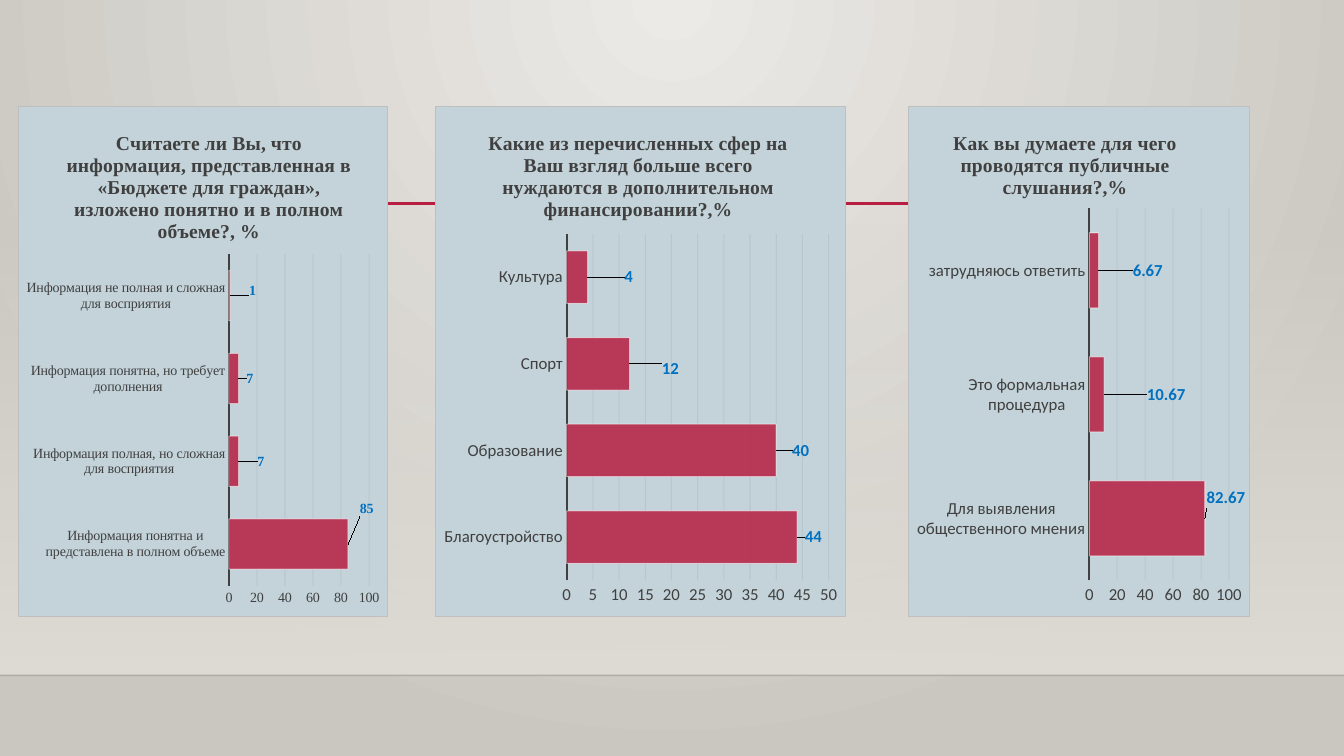
from pptx import Presentation
from pptx.chart.data import CategoryChartData
from pptx.dml.color import RGBColor
from pptx.enum.chart import XL_CHART_TYPE, XL_LABEL_POSITION, XL_TICK_MARK
from pptx.enum.shapes import MSO_CONNECTOR, MSO_SHAPE
from pptx.oxml import parse_xml
from pptx.oxml.ns import nsdecls, qn
from pptx.util import Cm, Pt
from lxml import etree

BARS = XL_CHART_TYPE.BAR_CLUSTERED
INSIDE = XL_LABEL_POSITION.INSIDE_END
NO_TICK = XL_TICK_MARK.NONE
LINE = MSO_CONNECTOR.STRAIGHT
RECT = MSO_SHAPE.RECTANGLE
SERIF = "Times New Roman"
SANS = "Calibri"
WIDE, HIGH = 33.87, 19.05
FLOOR = 17.02
COLORS = {
    "glow": "ECEAE7", "edge": "CAC7C1", "wall": "DFDBD5", "floor": "000001",
    "red": "B71E42", "panel": "C3D3D9", "border": "BFBFBF", "text": "404040",
    "grid": "0D0D0D", "white": "FFFFFF", "blue": "0070C0",
}

CHARTS = [
    dict(
        box=(10.97, 10.34), face=SANS, size=12, top=50, step=5,
        title="Какие из перечисленных сфер на Ваш взгляд больше всего "
              "нуждаются в дополнительном финансировании?,%",
        area=(0.32, 0.25, 0.64, 0.68),
        rows=[("Благоустройство", 44, 0.07, 0), ("Образование", 40, 0.09, 0),
              ("Спорт", 12, 0.13, 0.01), ("Культура", 4, 0.12, 0)],
    ),
    dict(
        box=(22.89, 8.61), face=SANS, size=12, top=100, step=20,
        title="Как вы думаете для чего проводятся публичные слушания?,%",
        area=(0.53, 0.2, 0.41, 0.73),
        rows=[("Для выявления общественного мнения", 82.67, 0.13, -0.04),
              ("Это формальная процедура", 10.67, 0.25, 0),
              ("затрудняюсь ответить", 6.67, 0.2, 0)],
    ),
    dict(
        box=(0.46, 9.32), face=SERIF, size=10, top=100, step=20,
        title="Считаете ли Вы, что информация, представленная в «Бюджете "
              "для граждан», изложено понятно и в полном объеме?, %",
        area=(0.57, 0.29, 0.38, 0.65),
        rows=[("Информация понятна и представлена в полном объеме", 85, 0.08, -0.07),
              ("Информация полная, но сложная для восприятия", 7, 0.08, 0),
              ("Информация понятна, но требует дополнения", 7, 0.05, 0),
              ("Информация не полная и сложная для восприятия", 1, 0.08, -0.01)],
    ),
]


class Deck:
    def __init__(self):
        self.deck = Presentation()
        self.deck.slide_width, self.deck.slide_height = Cm(WIDE), Cm(HIGH)
        self.slide = self.deck.slides.add_slide(self.deck.slide_layouts[6])

    def color(self, name):
        return RGBColor.from_string(COLORS[name])

    def font(self, font, face, size, name, bold=False):
        font.name, font.size, font.bold = face, Pt(size), bold
        font.color.rgb = self.color(name)

    def paint(self, fill, name):
        fill.solid()
        fill.fore_color.rgb = self.color(name)

    def stroke(self, line, name, width):
        self.paint(line.fill, name)
        line.width = Pt(width)

    def fade(self, node, share):
        etree.SubElement(node, qn("a:alpha")).set("val", str(share * 1000))

    def blend(self, fill, *names):
        fill.gradient()
        for stop, name in zip(fill.gradient_stops, names):
            stop.color.rgb = self.color(name)

    def back(self):
        self.blend(self.slide.background.fill, "glow", "edge")
        grad = self.slide.element.find(".//" + qn("a:gradFill"))
        grad.replace(grad.find(qn("a:lin")), parse_xml(
            f'<a:path {nsdecls("a")} path="circle">'
            '<a:fillToRect l="43000" t="0" r="43000" b="100000"/></a:path>'))

    def wall(self, top, bottom):
        wall = self.slide.shapes.add_shape(
            RECT, 0, Cm(top), Cm(WIDE), Cm(bottom - top))
        wall.shadow.inherit = False
        wall.line.fill.background()
        self.blend(wall.fill, "wall", "wall")
        wall.fill.gradient_angle = 270
        self.fade(wall.element.find(".//" + qn("a:gs"))[0], 0)

    def rule(self, left, right, y, name, width, share=100):
        rule = self.slide.shapes.add_connector(
            LINE, Cm(left), Cm(y), Cm(right), Cm(y))
        self.stroke(rule.line, name, width)
        self.fade(rule.element.find(".//" + qn("a:srgbClr")), share)
        etree.SubElement(rule.element.spPr, qn("a:effectLst"))

    def place(self, node, index, inner=False, **spots):
        for old in node.findall(qn("c:layout")):
            node.remove(old)
        layout = etree.Element(qn("c:layout"))
        manual = etree.SubElement(layout, qn("c:manualLayout"))
        if inner:
            spots = dict(layoutTarget="inner", xMode="edge", yMode="edge", **spots)
        for key, value in spots.items():
            etree.SubElement(manual, qn("c:" + key)).set("val", str(value))
        node.insert(index, layout)

    def axes(self, chart, face, size, top, step):
        for axis in (chart.category_axis, chart.value_axis):
            axis.major_tick_mark = axis.minor_tick_mark = NO_TICK
            self.font(axis.tick_labels.font, face, size, "text")
        self.stroke(chart.category_axis.format.line, "text", 1.5)
        axis = chart.value_axis
        axis.minimum_scale, axis.maximum_scale, axis.major_unit = 0, top, step
        axis.format.line.fill.background()
        axis.has_major_gridlines = True
        lines = axis.major_gridlines
        self.stroke(lines.format.line, "grid", 0.75)
        grid = chart.element if hasattr(chart, "element") else chart._chartSpace
        self.fade(grid.find(".//" + qn("c:majorGridlines")).find(
            ".//" + qn("a:srgbClr")), 5)

    def bars(self, plot, face, size, rows):
        plot.gap_width = 65
        plot.vary_by_categories = False
        bars = plot.series[0]
        self.paint(bars.format.fill, "red")
        self.stroke(bars.format.line, "white", 0.75)
        tones = bars.format.element if hasattr(bars.format, "element") else bars._element
        for tone, share in zip(tones.iter(qn("a:srgbClr")), (85, 50)):
            self.fade(tone, share)
        for index, (_, _, x, y) in enumerate(rows):
            label = bars.points[index].data_label
            label.position = INSIDE
            self.font(label.font, face, size, "blue", True)
        for node, row in zip(bars._element.iter(qn("c:dLbl")), rows):
            self.place(node, 1, x=row[2], y=row[3])

    def chart(self, box, face, size, top, step, title, area, rows):
        data = CategoryChartData()
        data.categories = [row[0] for row in rows]
        data.add_series("Series 1", [row[1] for row in rows])
        left, width = box
        chart = self.slide.shapes.add_chart(
            BARS, Cm(left), Cm(2.67), Cm(width), Cm(12.87), data).chart
        chart.has_legend = False
        chart.font.name, chart.font.size = face, Pt(10)
        head = chart.chart_title
        head.text_frame.text = title
        self.font(head.text_frame.paragraphs[0].font, SERIF, 14, "text", True)
        head.include_in_layout = False
        self.axes(chart, face, size, top, step)
        self.bars(chart.plots[0], face, size, rows)
        root = chart._chartSpace
        self.place(root.find(".//" + qn("c:title")), 1, True, x=0.12, y=0.04)
        self.place(root.find(".//" + qn("c:plotArea")), 0, True,
                   **dict(zip("xywh", area)))
        root.find(qn("c:chart")).addnext(parse_xml(
            f'<c:spPr {nsdecls("c", "a")}><a:solidFill><a:srgbClr val="{COLORS["panel"]}"/>'
            f'</a:solidFill><a:ln w="{Pt(0.75)}"><a:solidFill>'
            f'<a:srgbClr val="{COLORS["border"]}"/></a:solidFill></a:ln></c:spPr>'))


def main():
    deck = Deck()
    deck.back()
    deck.wall(5.61, FLOOR)
    deck.rule(0, WIDE, FLOOR, "floor", 1, 20)
    deck.rule(4.04, 30.73, 5.13, "red", 2.5)
    for chart in CHARTS:
        deck.chart(**chart)
    deck.deck.save("out.pptx")


if __name__ == "__main__":
    main()
